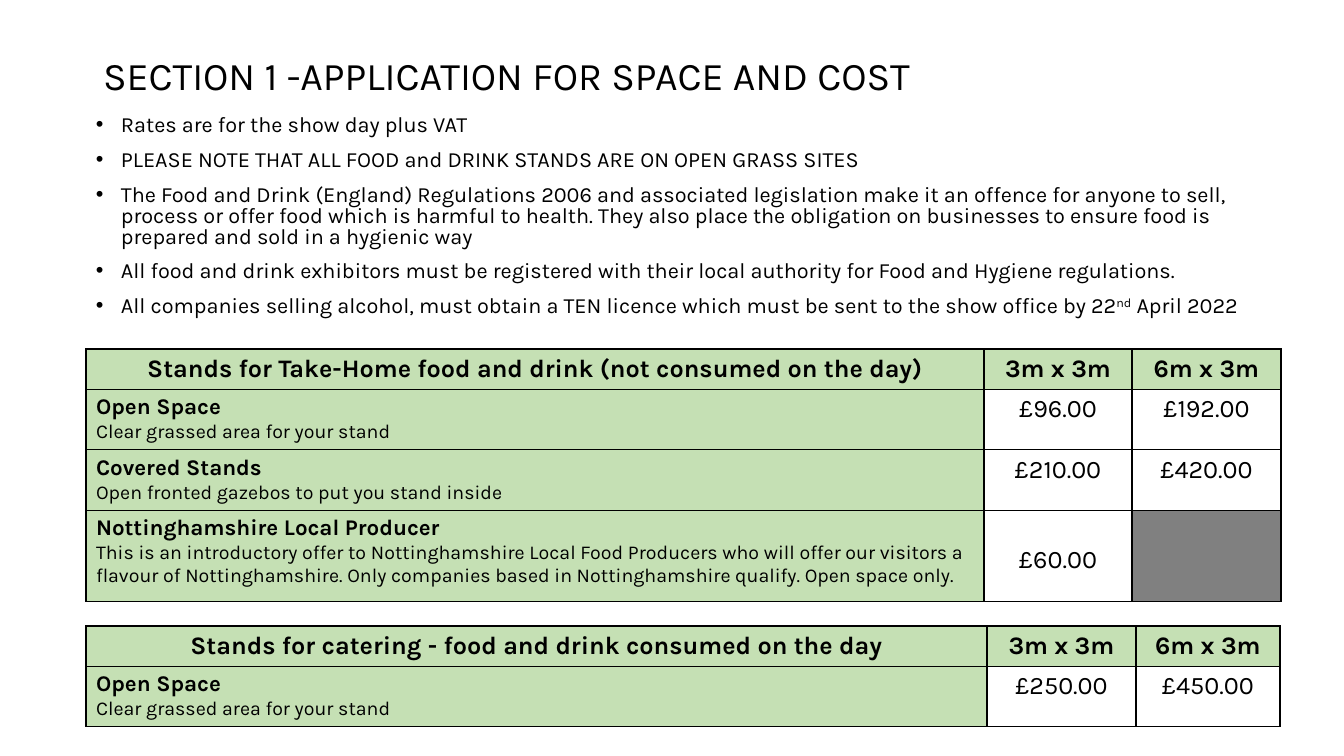
from lxml.etree import SubElement
from pptx import Presentation
from pptx.dml.color import RGBColor
from pptx.enum.text import MSO_ANCHOR, MSO_AUTO_SIZE, PP_ALIGN
from pptx.oxml.ns import qn
from pptx.util import Emu, Pt

BLACK = RGBColor(0x00, 0x00, 0x00)
WHITE = RGBColor(0xFF, 0xFF, 0xFF)
GREEN = RGBColor(0xC5, 0xE0, 0xB4)
GREY = RGBColor(0x80, 0x80, 0x80)
FONT = "Karla"
SIZES = ["3m x 3m", "6m x 3m"]


def px(count):
    return Emu(round(count * 914400 / 100.8))


def style(para, size, bold=False):
    for span in para.runs:
        span.font.name = FONT
        span.font.size = Pt(size)
        span.font.bold = bold
        span.font.color.rgb = BLACK


deck = Presentation()
deck.slide_width = px(1344)
deck.slide_height = px(756)
page = deck.slides.add_slide(deck.slide_layouts[5])

title = page.shapes.title
title.left, title.top, title.width, title.height = px(93), px(25), px(1159), px(106)
title.text_frame.text = "SECTION 1 -APPLICATION FOR SPACE AND COST"
title.text_frame.auto_size = MSO_AUTO_SIZE.NONE
title.text_frame.vertical_anchor = MSO_ANCHOR.MIDDLE
heading = title.text_frame.paragraphs[0]
heading.alignment = PP_ALIGN.LEFT
heading.line_spacing = 0.9
style(heading, 28)

notes = [
    ["Rates are for the show day plus VAT"],
    ["PLEASE NOTE THAT ALL FOOD and DRINK STANDS ARE ON OPEN GRASS SITES"],
    ["The Food and Drink (England) Regulations 2006 and associated legislation make it an offence "
     "for anyone to sell, process or offer food which is harmful to health. They also place the "
     "obligation on businesses to ensure food is prepared and sold in a hygienic way"],
    ["All food and drink exhibitors must be registered with their local authority for Food and "
     "Hygiene regulations."],
    ["All companies selling alcohol, must obtain a TEN licence which must be sent to the show "
     "office by 22", "nd", " April 2022"],
]
box = page.shapes.add_textbox(px(86), px(106), px(1194), px(235))
box.text_frame.word_wrap = True
for index, parts in enumerate(notes):
    para = box.text_frame.paragraphs[0] if index == 0 else box.text_frame.add_paragraph()
    properties = para._p.get_or_add_pPr()
    properties.set("marL", str(px(25)))
    properties.set("indent", str(-px(25)))
    SubElement(properties, qn("a:buFont"), typeface="Arial")
    SubElement(properties, qn("a:buChar"), char="•")
    if index:
        para.line_spacing = 0.8
        para.space_before = Pt(10)
    for part in parts:
        span = para.add_run()
        span.text = part
        if part == "nd":
            span._r.get_or_add_rPr().set("baseline", "30000")
    style(para, 15.5)

grass = "Clear grassed area for your stand"
tables = [
    (349, [898, 148, 149], [40, 59, 59, 91], [
        ["Stands for Take-Home food and drink (not consumed on the day)", *SIZES],
        [f"Open Space\n{grass}", "£96.00", "£192.00"],
        ["Covered Stands\nOpen fronted gazebos to put you stand inside", "£210.00", "£420.00"],
        ["Nottinghamshire Local Producer\nThis is an introductory offer to Nottinghamshire Local "
         "Food Producers who will offer our visitors a flavour of Nottinghamshire. Only companies "
         "based in Nottinghamshire qualify. Open space only.", "£60.00", ""],
    ]),
    (626, [901, 149, 144], [40, 59], [
        ["Stands for catering - food and drink consumed on the day", *SIZES],
        [f"Open Space\n{grass}", "£250.00", "£450.00"],
    ]),
]
for top, widths, heights, rows in tables:
    frame = page.shapes.add_table(len(rows), 3, px(86), px(top), px(sum(widths)), px(sum(heights)))
    table = frame.table
    table.first_row = table.horz_banding = False
    for column, width in zip(table.columns, widths):
        column.width = px(width)
    for row_index, (height, texts) in enumerate(zip(heights, rows)):
        table.rows[row_index].height = px(height)
        for column_index, text in enumerate(texts):
            cell = table.cell(row_index, column_index)
            cell.text = text
            properties = cell._tc.get_or_add_tcPr()
            for side in ("a:lnL", "a:lnR", "a:lnT", "a:lnB"):
                line = SubElement(properties, qn(side), w=str(Pt(1)))
                fill = SubElement(line, qn("a:solidFill"))
                SubElement(fill, qn("a:srgbClr"), val=str(BLACK))
            cell.fill.solid()
            header, label = row_index == 0, column_index == 0
            cell.fill.fore_color.rgb = GREEN if header or label else WHITE if text else GREY
            if text == "£60.00":
                cell.vertical_anchor = MSO_ANCHOR.MIDDLE
                cell.margin_top = px(14)
            for para_index, para in enumerate(cell.text_frame.paragraphs):
                if label and not header:
                    style(para, 14 if para_index else 16, para_index == 0)
                else:
                    para.alignment = PP_ALIGN.CENTER
                    style(para, 18, header)

deck.save("out.pptx")
